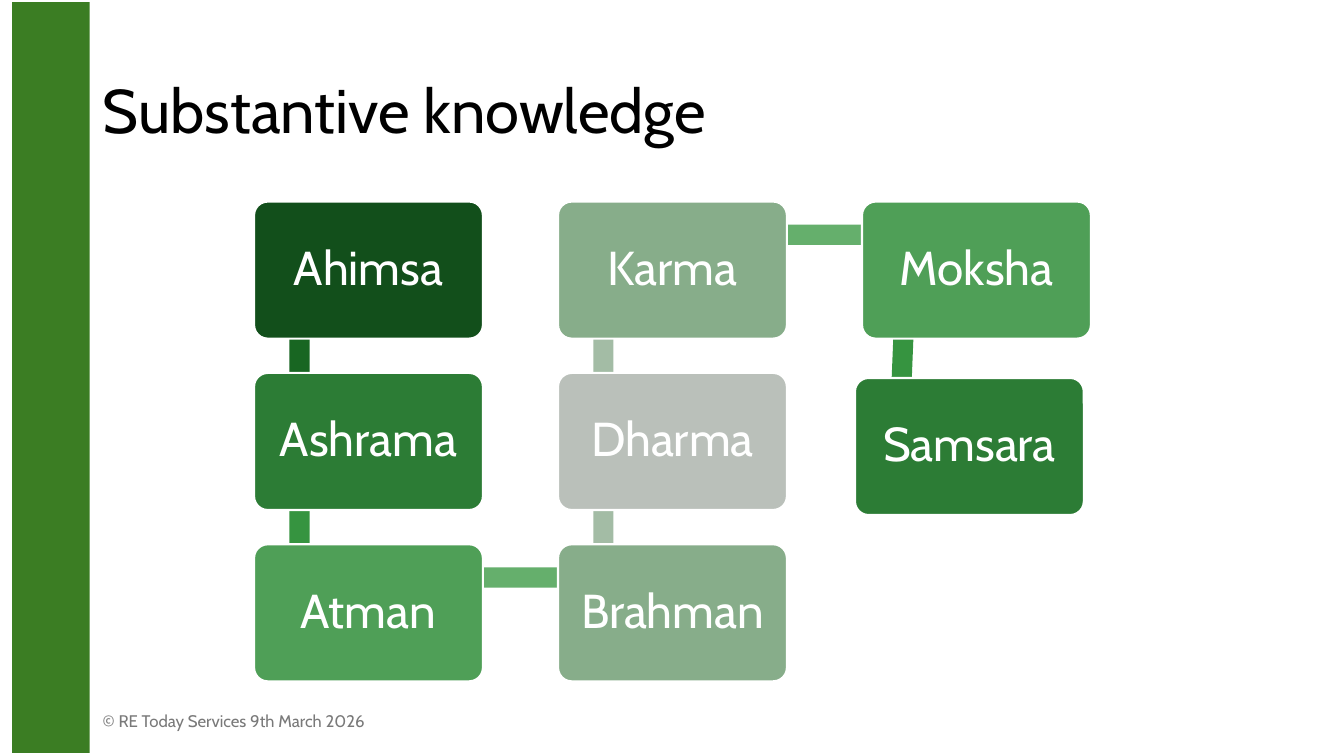
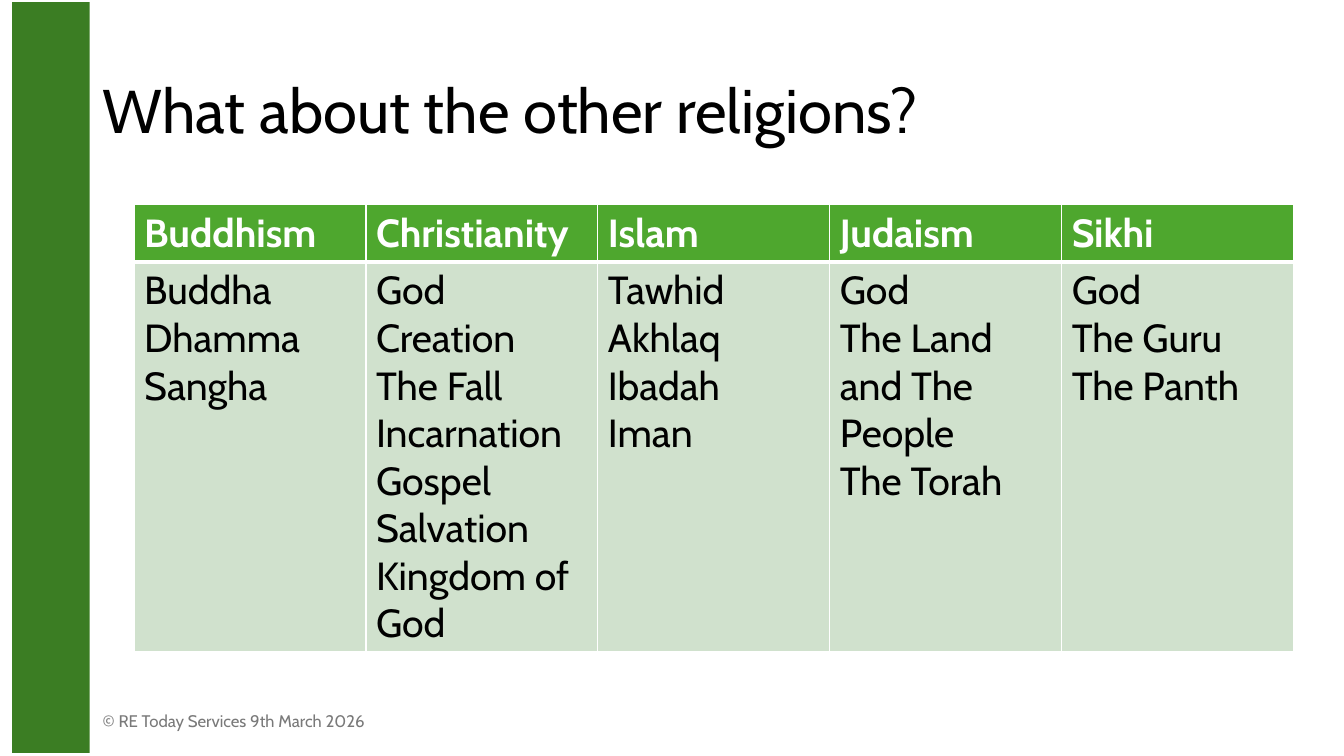
from dataclasses import dataclass
from itertools import pairwise
from math import atan2, degrees, hypot

from lxml import etree
from pptx import Presentation
from pptx import util as u
from pptx.dml.color import RGBColor
from pptx.enum import shapes, text
from pptx.oxml.ns import qn


@dataclass(frozen=True)
class Theme:
    """Colours, font and type sizes of the deck."""
    font: str = "Cabin"
    white: str = "FFFFFF"
    black: str = "000000"
    grey: str = "797979"
    band: str = "3B7D23"
    head: str = "4EA72E"
    body: str = "D0E1CD"
    title: int = 44
    node: int = 34
    cell: int = 28
    foot: int = 12


T = Theme()

NODES = [
    ("Ahimsa", "124F1B"), ("Ashrama", "2C7C35"), ("Atman", "4F9F57"),
    ("Brahman", "87AD8A"), ("Dharma", "BAC0BA"), ("Karma", "87AD8A"),
    ("Moksha", "4F9F57"), ("Samsara", "2C7C35"),
]
LINKS = ["186622", "369440", "65AF6C", "A3BCA5", "A3BCA5", "65AF6C", "369440"]
FAITHS = {
    "Buddhism": ["Buddha", "Dhamma", "Sangha"],
    "Christianity": ["God", "Creation", "The Fall", "Incarnation", "Gospel",
                     "Salvation", "Kingdom of God"],
    "Islam": ["Tawhid", "Akhlaq", "Ibadah", "Iman"],
    "Judaism": ["God", "The Land and The People", "The Torah"],
    "Sikhi": ["God", "The Guru", "The Panth"],
}


def rgb(code):
    """Turn a hex code into a colour."""
    return RGBColor.from_string(code)


def write(frame, lines, size, color=T.black, bold=False,
          align=text.PP_ALIGN.LEFT, space=1.0):
    """Fill a text frame with one paragraph for each line."""
    for i, line in enumerate(lines):
        para = frame.paragraphs[0] if i == 0 else frame.add_paragraph()
        para.text = line
        para.alignment, para.line_spacing = align, space
        font = para.font
        font.name, font.size, font.bold = T.font, u.Pt(size), bold
        font.color.rgb = rgb(color)


def label(slide, box, line, **form):
    """Place a wrapped text box, centred in height."""
    frame = slide.shapes.add_textbox(*map(u.Inches, box)).text_frame
    frame.word_wrap = True
    frame.vertical_anchor = text.MSO_ANCHOR.MIDDLE
    write(frame, [line], **form)


def block(slide, box, fill, kind=shapes.MSO_SHAPE.RECTANGLE):
    """Place a plain filled shape."""
    item = slide.shapes.add_shape(kind, *map(u.Inches, box))
    item.shadow.inherit = False
    item.fill.solid()
    item.fill.fore_color.rgb = rgb(fill)
    item.line.fill.background()
    return item


def page(deck, title):
    """Add a slide with side band, title and footer."""
    slide = deck.slides.add_slide(deck.slide_layouts[6])
    block(slide, (0.12, 0.02, 0.77, 7.45), T.band)
    label(slide, (0.92, 0.4, 11.5, 1.45), title, size=T.title, space=0.9)
    label(slide, (0.92, 6.95, 3, 0.4), "© RE Today Services 9th March 2026",
          size=T.foot, color=T.grey)
    return slide


def link(slide, start, end, fill, thick=0.2):
    """Draw a bar from one point to another."""
    (ax, ay), (bx, by) = start, end
    span = hypot(bx - ax, by - ay)
    box = ((ax + bx - span) / 2, (ay + by - thick) / 2, span, thick)
    block(slide, box, fill).rotation = degrees(atan2(by - ay, bx - ax))


def node(slide, box, name, fill):
    """Draw a rounded box with its name."""
    item = block(slide, box, fill, shapes.MSO_SHAPE.ROUNDED_RECTANGLE)
    item.adjustments[0] = 0.1
    item.line.color.rgb = rgb(T.white)
    item.line.width = u.Pt(1.5)
    frame = item.text_frame
    frame.word_wrap = True
    frame.vertical_anchor = text.MSO_ANCHOR.MIDDLE
    write(frame, [name], size=T.node, color=T.white,
          align=text.PP_ALIGN.CENTER, space=0.9)


def snake(slide, box, rows=3, cols=3, wide=2.27, high=1.36):
    """Wind the chain of nodes down and up the columns of a box."""
    left, top, width, height = box
    across, down = (width - wide) / (cols - 1), (height - high) / (rows - 1)
    spots = []
    for i in range(len(NODES)):
        col, row = divmod(i, rows)
        row = rows - 1 - row if col % 2 else row
        spots.append((left + col * across, top + row * down))
    x, y = spots[-1]
    spots[-1] = (x - 0.07, y + 0.05)
    joints = [(x + 0.45, y + 0.33) for x, y in spots]
    for (start, end), fill in zip(pairwise(joints), LINKS):
        link(slide, start, end, fill)
    for (x, y), (name, fill) in zip(spots, NODES):
        node(slide, (x, y, wide, high), name, fill)


def edge(cell, base):
    """Give a cell white borders, with its own lower width."""
    props = cell._tc.get_or_add_tcPr()
    for side, width in (("L", 1), ("R", 1), ("T", 1), ("B", base)):
        line = etree.SubElement(props, qn(f"a:ln{side}"), w=str(u.Pt(width)))
        fill = etree.SubElement(line, qn("a:solidFill"))
        etree.SubElement(fill, qn("a:srgbClr"), val=T.white)


def grid(slide, box, head=0.57):
    """Draw the table of religions and their concepts."""
    left, top, width, height = map(u.Inches, box)
    table = slide.shapes.add_table(
        2, len(FAITHS), left, top, width, height).table
    table.rows[0].height = u.Inches(head)
    table.rows[1].height = height - u.Inches(head)
    for col, (faith, ideas) in enumerate(FAITHS.items()):
        parts = (([faith], T.head, T.white, True, 3),
                 (ideas, T.body, T.black, False, 1))
        for row, (lines, fill, color, bold, base) in enumerate(parts):
            cell = table.cell(row, col)
            edge(cell, base)
            cell.fill.solid()
            cell.fill.fore_color.rgb = rgb(fill)
            write(cell.text_frame, lines, size=T.cell, color=color, bold=bold)


def main():
    """Build and save the deck."""
    deck = Presentation()
    deck.slide_width, deck.slide_height = u.Inches(13.33), u.Inches(7.5)
    snake(page(deck, "Substantive knowledge"), (2.52, 2, 8.3, 4.76))
    grid(page(deck, "What about the other religions?"), (1.33, 2.03, 11.5, 4.43))
    deck.save("out.pptx")


if __name__ == "__main__":
    main()
